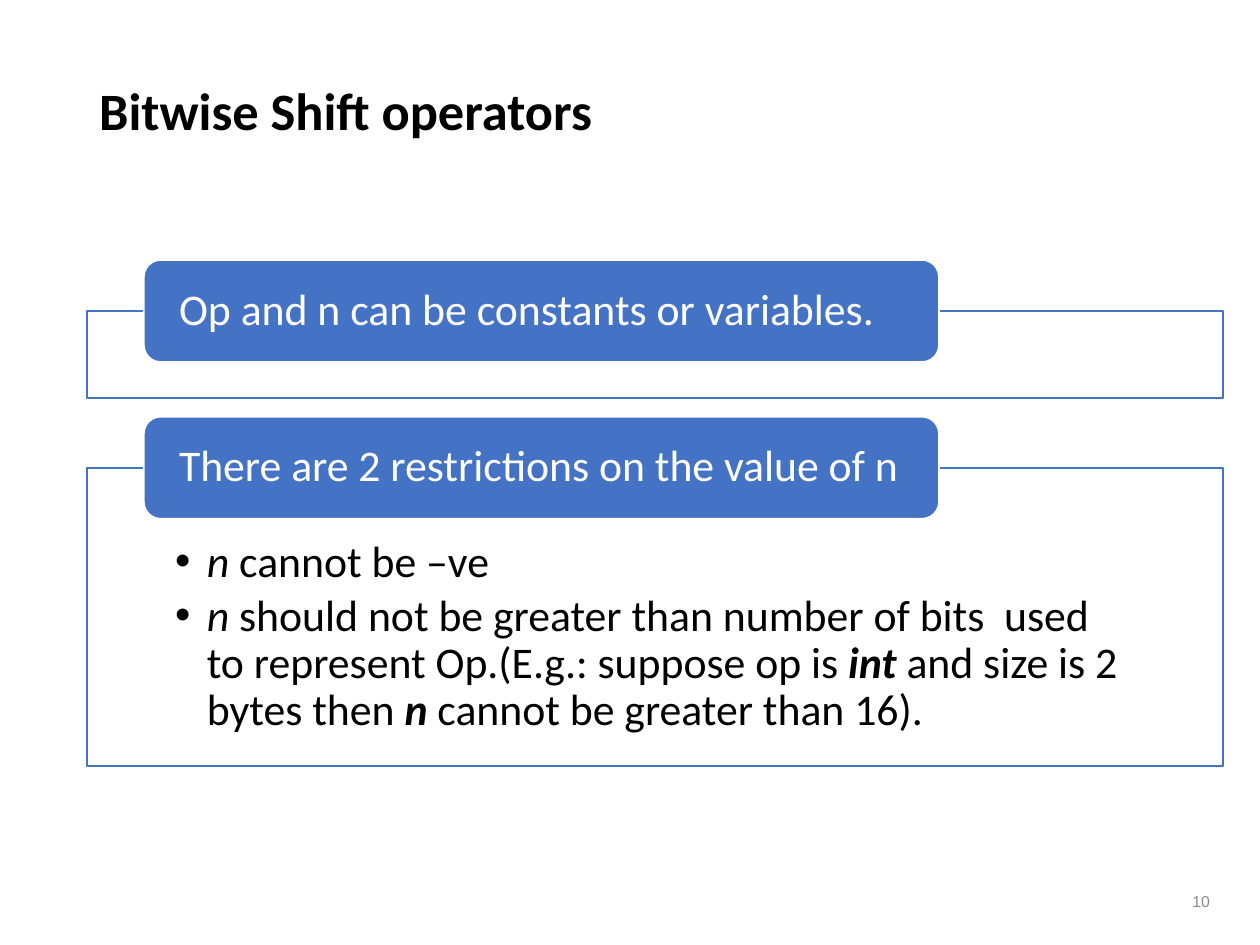
"""Build the slide on bitwise shift operators, with two labelled panels."""
from lxml import etree
from pptx import Presentation
from pptx import util as u
from pptx.dml import color
from pptx.enum import shapes, text
from pptx.oxml import ns

COLORS = {"accent": "4472C4", "white": "FFFFFF", "black": "000000", "gray": "8C8C8C"}
TITLE = "Bitwise Shift operators"
PAGE_NUMBER = "10"
PANELS = [
    {"label": "Op and n can be constants or variables.", "height": 1.75, "points": []},
    {
        "label": "There are 2 restrictions on the value of n",
        "height": 6.02,
        "points": [
            [("n", "i"), (" cannot be –ve", "")],
            [
                ("n", "i"),
                (" should not be greater than number of bits  used to represent Op."
                 "(E.g.: suppose op is ", ""),
                ("int", "bi"),
                (" and size is 2 bytes then ", ""),
                ("n", "bi"),
                (" cannot be greater than 16).", ""),
            ],
        ],
    },
]
LEFT, WIDTH = 1.75, 22.91
LABEL_LEFT, LABEL_WIDTH, LABEL_HEIGHT = 2.9, 16.03, 2.06
FIRST_LABEL_TOP, PANEL_GAP = 5.24, 0.38
BULLET_INDENT = 0.64


def rgb(name):
    return color.RGBColor.from_string(COLORS[name])


def add_bullet(paragraph):
    properties = paragraph._p.get_or_add_pPr()
    properties.set("marL", str(u.Cm(BULLET_INDENT)))
    properties.set("indent", str(-u.Cm(BULLET_INDENT)))
    etree.SubElement(properties, ns.qn("a:buFont")).set("typeface", "Arial")
    etree.SubElement(properties, ns.qn("a:buChar")).set("char", "•")


def write(shape, paragraphs, size, ink, font="Calibri", align=text.PP_ALIGN.LEFT,
          anchor=text.MSO_ANCHOR.MIDDLE, insets=(0.25, 0.13, 0.25, 0.13),
          line_spacing=0.9, space_after=0, bullets=False):
    frame = shape.text_frame
    frame.word_wrap = True
    frame.vertical_anchor = anchor
    (frame.margin_left, frame.margin_top,
     frame.margin_right, frame.margin_bottom) = map(u.Cm, insets)
    for index, runs in enumerate(paragraphs):
        paragraph = frame.add_paragraph() if index else frame.paragraphs[0]
        if bullets:
            add_bullet(paragraph)
        paragraph.alignment = align
        paragraph.line_spacing = line_spacing
        paragraph.space_after = u.Pt(space_after)
        for words, style in runs:
            run = paragraph.add_run()
            run.text = words
            run.font.name = font
            run.font.size = u.Pt(size)
            run.font.bold = "b" in style
            run.font.italic = "i" in style
            run.font.color.rgb = rgb(ink)


def add_box(parent, kind, left, top, width, height, fill, line):
    shape = parent.shapes.add_shape(kind, *map(u.Cm, (left, top, width, height)))
    shape.shadow.inherit = False
    shape.fill.solid()
    shape.fill.fore_color.rgb = rgb(fill)
    shape.line.color.rgb = rgb(line)
    shape.line.width = u.Pt(1)
    return shape


def add_panels(slide):
    group = slide.shapes.add_group_shape()
    label_top = FIRST_LABEL_TOP
    for panel in PANELS:
        panel_top = label_top + LABEL_HEIGHT / 2
        frame = add_box(group, shapes.MSO_SHAPE.RECTANGLE, LEFT, panel_top,
                        WIDTH, panel["height"], "white", "accent")
        if panel["points"]:
            write(frame, panel["points"], 25, "black", anchor=text.MSO_ANCHOR.TOP,
                  insets=(1.78, 1.45, 1.78, 0.48), space_after=3.75, bullets=True)
        label = add_box(group, shapes.MSO_SHAPE.ROUNDED_RECTANGLE, LABEL_LEFT, label_top,
                        LABEL_WIDTH, LABEL_HEIGHT, "accent", "white")
        write(label, [[(panel["label"], "")]], 25, "white", insets=(0.61, 0, 0.61, 0))
        label_top = panel_top + panel["height"] + PANEL_GAP


def main():
    presentation = Presentation()
    presentation.slide_width, presentation.slide_height = u.Cm(25.4), u.Cm(19.05)
    slide = presentation.slides.add_slide(presentation.slide_layouts[6])
    title = slide.shapes.add_textbox(*map(u.Cm, (LEFT, 1.42, WIDTH, 1.75)))
    write(title, [[(TITLE, "b")]], 30, "black")
    number = slide.shapes.add_textbox(*map(u.Cm, (23.65, 17.65, 0.99, 1.02)))
    write(number, [[(PAGE_NUMBER, "")]], 9, "gray", font="Arial",
          align=text.PP_ALIGN.RIGHT, line_spacing=1.0)
    add_panels(slide)
    presentation.save("out.pptx")


if __name__ == "__main__":
    main()
